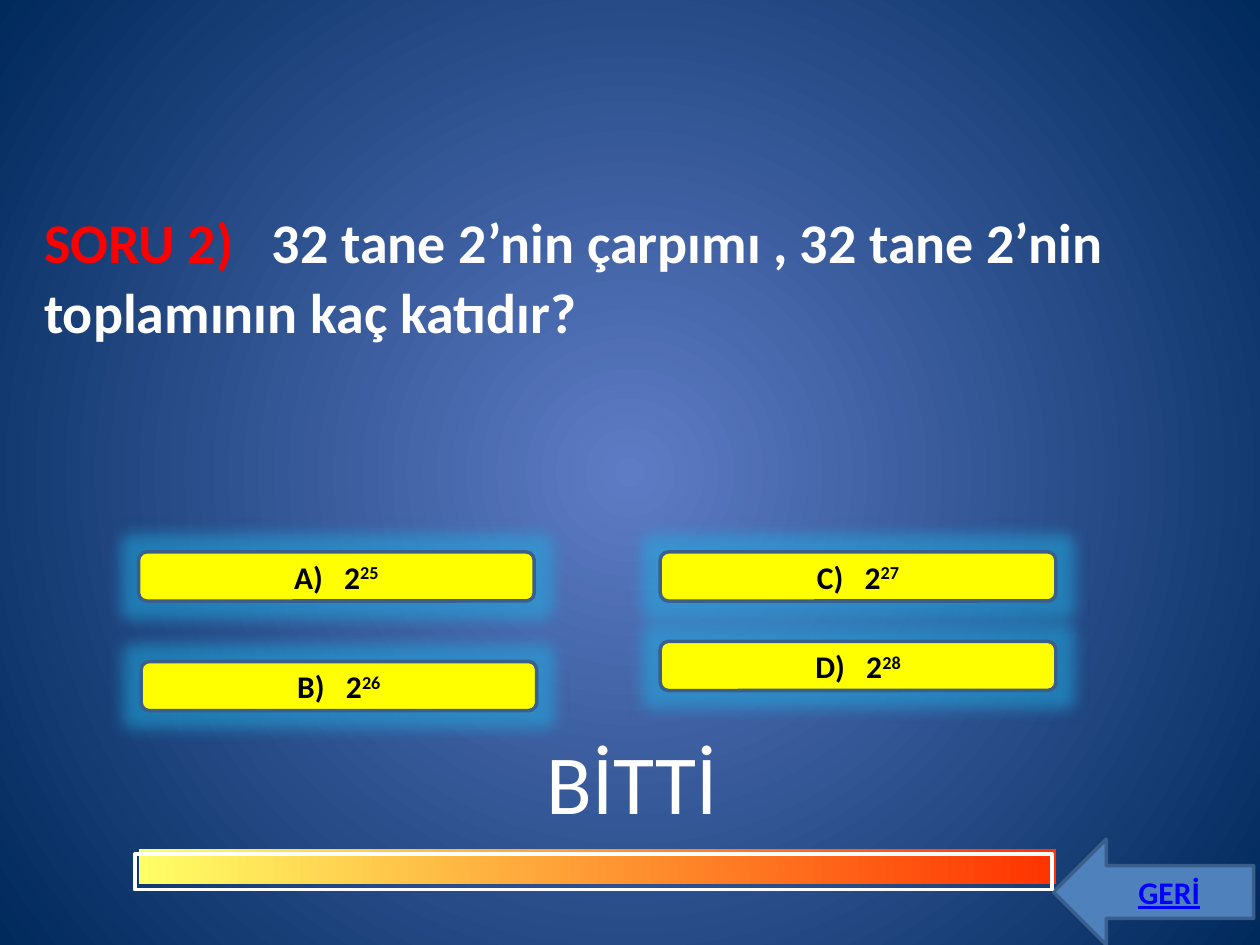
from lxml.etree import SubElement
from pptx import Presentation
from pptx.dml.color import RGBColor
from pptx.enum.shapes import MSO_SHAPE
from pptx.enum.text import MSO_ANCHOR, MSO_AUTO_SIZE, PP_ALIGN
from pptx.oxml import parse_xml
from pptx.oxml.ns import nsdecls, qn
from pptx.util import Inches, Pt


def color(value):
    return RGBColor.from_string(value)


def add_text(paragraph, text, size=18, fill="FFFFFF", bold=True, underline=None, baseline=None):
    run = paragraph.add_run()
    run.text = text
    font = run.font
    font.name, font.size, font.bold, font.underline = "Calibri", Pt(size), bold, underline
    font.color.rgb = color(fill)
    if baseline:
        font._element.set("baseline", str(baseline * 1000))


presentation = Presentation()
presentation.slide_width, presentation.slide_height = Inches(10), Inches(7.5)
slide = presentation.slides.add_slide(presentation.slide_layouts[1])
title = slide.shapes.title
title.element.getparent().remove(title.element)

# Background: circular gradient from the centre
background = slide.background.fill
background.gradient()
for stop, value in zip(background.gradient_stops, ("5E7CC5", "00295C")):
    stop.color.rgb = color(value)
    stop.position = 0 if value == "5E7CC5" else 1
linear = slide.element.find(".//" + qn("a:lin"))
linear.getparent().replace(linear, parse_xml(
    f'<a:path {nsdecls("a")} path="circle">'
    '<a:fillToRect l="50000" t="50000" r="50000" b="50000"/></a:path>'))

# Question
question = slide.placeholders[1]
question.left, question.top = Inches(0.25), Inches(1.55)
question.width, question.height = Inches(9.57), Inches(1.26)
frame = question.text_frame
frame.auto_size = MSO_AUTO_SIZE.NONE
frame.vertical_anchor = MSO_ANCHOR.MIDDLE
paragraph = frame.paragraphs[0]
paragraph.line_spacing = 1.05
paragraph.space_after = Pt(10)
properties = paragraph._p.get_or_add_pPr()
properties.set("marL", "0")
properties.set("indent", "0")
SubElement(properties, qn("a:buNone"))
add_text(paragraph, "SORU 2)   ", size=32, fill="FF0000")
add_text(paragraph, "32 tane 2’nin çarpımı ,", size=32)
add_text(paragraph, " ", size=28)
add_text(paragraph, "32 tane 2’nin toplamının kaç katıdır?", size=32)

# Back arrow and its label
arrow = slide.shapes.add_shape(
    MSO_SHAPE.LEFT_ARROW, Inches(8.36), Inches(6.66), Inches(1.59), Inches(0.84))
arrow.shadow.inherit = False
arrow.fill.solid()
arrow.fill.fore_color.rgb = color("4F81BD")
arrow.line.color.rgb = color("3A5F8C")
arrow.line.width = Pt(2)
label = slide.shapes.add_textbox(Inches(8.61), Inches(6.88), Inches(1.34), Inches(0.4))
label.text_frame.word_wrap = True
label.text_frame.paragraphs[0].alignment = PP_ALIGN.CENTER
add_text(label.text_frame.paragraphs[0], "GERİ", fill="0000FF", underline=True)

# Time bar and its frame
bar, bar_frame = [
    slide.shapes.add_shape(MSO_SHAPE.RECTANGLE, Inches(left), Inches(top), Inches(7.28), Inches(0.28))
    for left, top in ((1.1, 6.74), (1.07, 6.78))]
bar.shadow.inherit = bar_frame.shadow.inherit = False
bar.fill.gradient()
bar.fill.gradient_angle = 0
for stop, value in zip(bar.fill.gradient_stops, ("FFFF66", "FF3300")):
    stop.color.rgb = color(value)
bar.line.fill.background()
bar_frame.fill.background()
bar_frame.line.color.rgb = color("FFFFFF")
bar_frame.line.width = Pt(2.25)

# Time-up message
message = slide.shapes.add_textbox(Inches(4.24), Inches(5.75), Inches(1.57), Inches(0.91))
message.text_frame.word_wrap = False
add_text(message.text_frame.paragraphs[0], "BİTTİ", size=48, bold=False)

# Answers with a blue glow
answers = (("A", 25, 1.1, 4.38), ("B", 26, 1.12, 5.25), ("D", 28, 5.24, 5.09), ("C", 27, 5.24, 4.38))
for letter, exponent, left, top in answers:
    answer = slide.shapes.add_shape(
        MSO_SHAPE.ROUNDED_RECTANGLE, Inches(left), Inches(top), Inches(3.14), Inches(0.39))
    answer.shadow.inherit = False
    answer.fill.solid()
    answer.fill.fore_color.rgb = color("FFFF00")
    answer.line.color.rgb = color("3A5F8C")
    answer.line.width = Pt(2)
    effects = answer.element.spPr.find(qn("a:effectLst"))
    glow = SubElement(effects, qn("a:glow"), rad=str(Inches(0.25)))
    glow_color = SubElement(glow, qn("a:srgbClr"), val="1FB1E6")
    SubElement(glow_color, qn("a:alpha"), val="50000")
    answer.text_frame.vertical_anchor = MSO_ANCHOR.MIDDLE
    paragraph = answer.text_frame.paragraphs[0]
    paragraph.alignment = PP_ALIGN.CENTER
    add_text(paragraph, f"{letter})   2", fill="000000")
    add_text(paragraph, str(exponent), fill="000000", baseline=30)

presentation.save("out.pptx")
